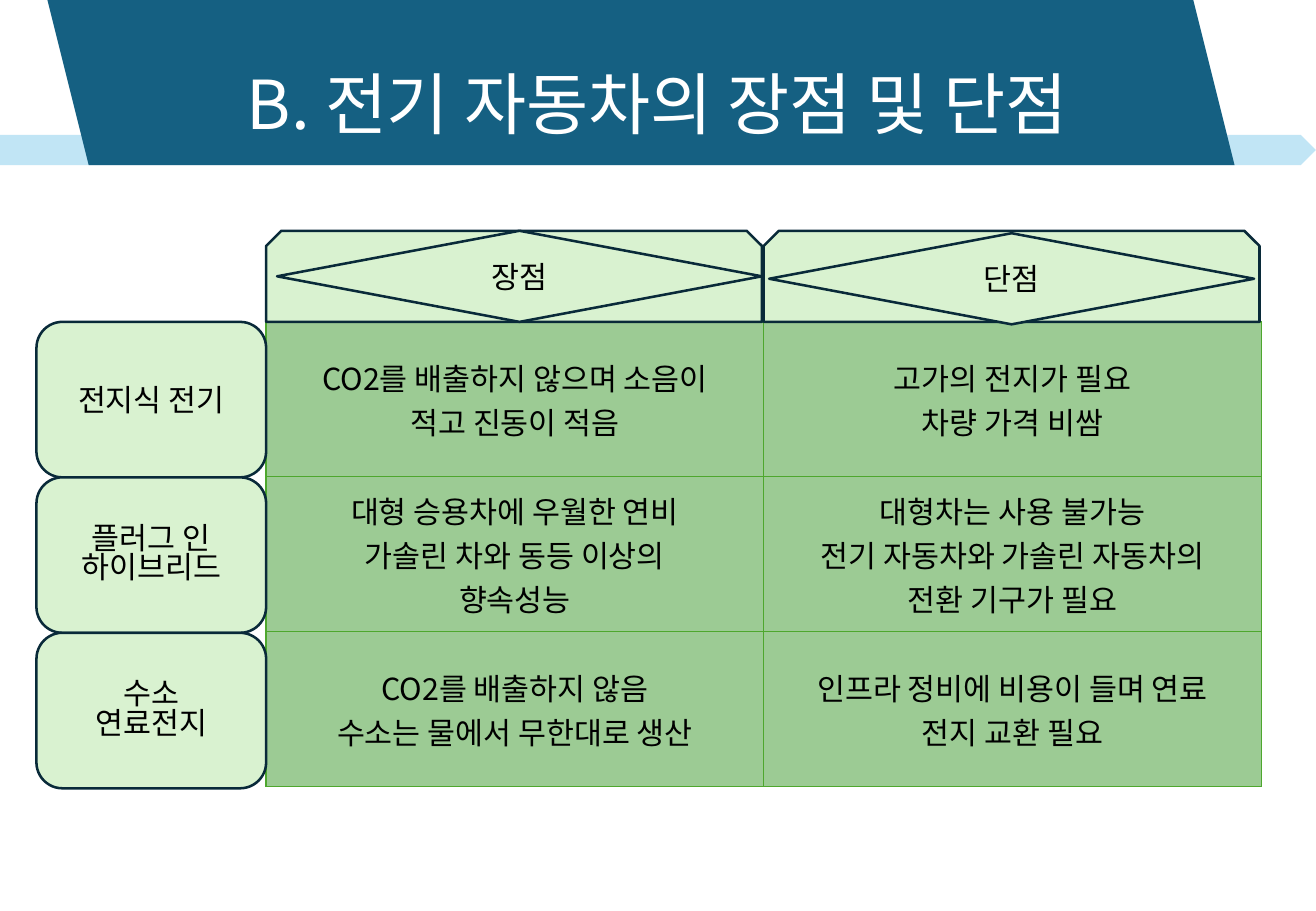
from lxml import etree
from pptx import Presentation
from pptx.dml.color import RGBColor
from pptx.enum.shapes import MSO_SHAPE as Kind
from pptx.enum.text import MSO_ANCHOR as Anchor, PP_ALIGN as Align
from pptx.oxml.ns import qn
from pptx.util import Inches, Pt

# Content
FONT = "Noto Sans CJK KR"
TITLE = "B. 전기 자동차의 장점 및 단점"
HEADS = ["장점", "단점"]
LABELS = [["전지식 전기"], ["플러그 인", "하이브리드"], ["수소", "연료전지"]]
CELLS = [
    [["CO2를 배출하지 않으며 소음이", "적고 진동이 적음"],
     ["고가의 전지가 필요", "차량 가격 비쌈"]],
    [["대형 승용차에 우월한 연비", "가솔린 차와 동등 이상의", "향속성능"],
     ["대형차는 사용 불가능", "전기 자동차와 가솔린 자동차의", "전환 기구가 필요"]],
    [["CO2를 배출하지 않음", "수소는 물에서 무한대로 생산"],
     ["인프라 정비에 비용이 들며 연료", "전지 교환 필요"]],
]
COLORS = {"arrow": "C1E5F5", "banner": "156082", "pale": "D9F2D0", "edge": "092A39",
          "cell": "9CCB94", "grid": "4EA72E", "text": "000000", "white": "FFFFFF"}

# Layout in inches
LEFT, TOP = 2.19, 2.65
COL, ROW = 4.095, 1.275
HEAD = 0.75
GEMS = [(2.28, 1.9), (6.33, 1.92)]


def rgb(name):
    return RGBColor.from_string(COLORS[name])


def write(frame, lines, size=18, color="text", gap=None):
    frame.word_wrap = True
    for i, line in enumerate(lines):
        para = frame.paragraphs[0] if i == 0 else frame.add_paragraph()
        para.alignment = Align.CENTER
        if gap:
            para.line_spacing = gap
        run = para.add_run()
        run.text = line
        run.font.size = Pt(size)
        run.font.name = FONT
        run.font.color.rgb = rgb(color)
        east = etree.SubElement(run.font._element, qn("a:ea"))
        east.set("typeface", FONT)


def draw(kind, x, y, w, h, fill="pale", edge="edge"):
    shape = slide.shapes.add_shape(kind, Inches(x), Inches(y), Inches(w), Inches(h))
    shape.shadow.inherit = False
    shape.fill.solid()
    shape.fill.fore_color.rgb = rgb(fill)
    if edge:
        shape.line.color.rgb = rgb(edge)
        shape.line.width = Pt(1.5)
    else:
        shape.line.fill.background()
    shape.text_frame.vertical_anchor = Anchor.MIDDLE
    return shape


def border(cell):
    props = cell._tc.get_or_add_tcPr()
    for side in ("lnL", "lnR", "lnT", "lnB"):
        line = etree.SubElement(props, qn("a:" + side), w=str(Pt(1)))
        fill = etree.SubElement(line, qn("a:solidFill"))
        etree.SubElement(fill, qn("a:srgbClr"), val=COLORS["grid"])


deck = Presentation()
deck.slide_width, deck.slide_height = Inches(10.83), Inches(7.5)
slide = deck.slides.add_slide(deck.slide_layouts[6])

# Title banner
draw(Kind.PENTAGON, 0, 1.11, 10.83, 0.25, "arrow", None)
banner = draw(Kind.PARALLELOGRAM, 0.39, 0, 9.77, 1.36, "banner", None)
banner._element.spPr.find(qn("a:xfrm")).set("flipV", "1")
title = slide.shapes.add_textbox(Inches(0.74), Inches(0.4), Inches(9.34), Inches(0.97))
title.text_frame.vertical_anchor = Anchor.MIDDLE
write(title.text_frame, [TITLE], 40, "white", 0.9)

# Table
rows, cols = len(CELLS), len(HEADS)
frame = slide.shapes.add_table(rows, cols, Inches(LEFT), Inches(TOP),
                               Inches(COL * cols), Inches(ROW * rows))
table = frame.table
table.first_row = table.horz_banding = False
for r, row in enumerate(CELLS):
    for c, lines in enumerate(row):
        cell = table.cell(r, c)
        border(cell)
        cell.fill.solid()
        cell.fill.fore_color.rgb = rgb("cell")
        cell.vertical_anchor = Anchor.MIDDLE
        write(cell.text_frame, lines)

# Column heads
for c, head in enumerate(HEADS):
    draw(Kind.SNIP_2_SAME_RECTANGLE, LEFT + c * COL, TOP - HEAD, 4.08, HEAD)
    gem = draw(Kind.DIAMOND, *GEMS[c], 3.99, HEAD)
    write(gem.text_frame, [head])

# Row labels
for r, lines in enumerate(LABELS):
    label = draw(Kind.ROUNDED_RECTANGLE, 0.3, TOP + r * 1.28, 1.89, 1.28)
    write(label.text_frame, lines, gap=0.82 if len(lines) > 1 else None)

deck.save("out.pptx")
